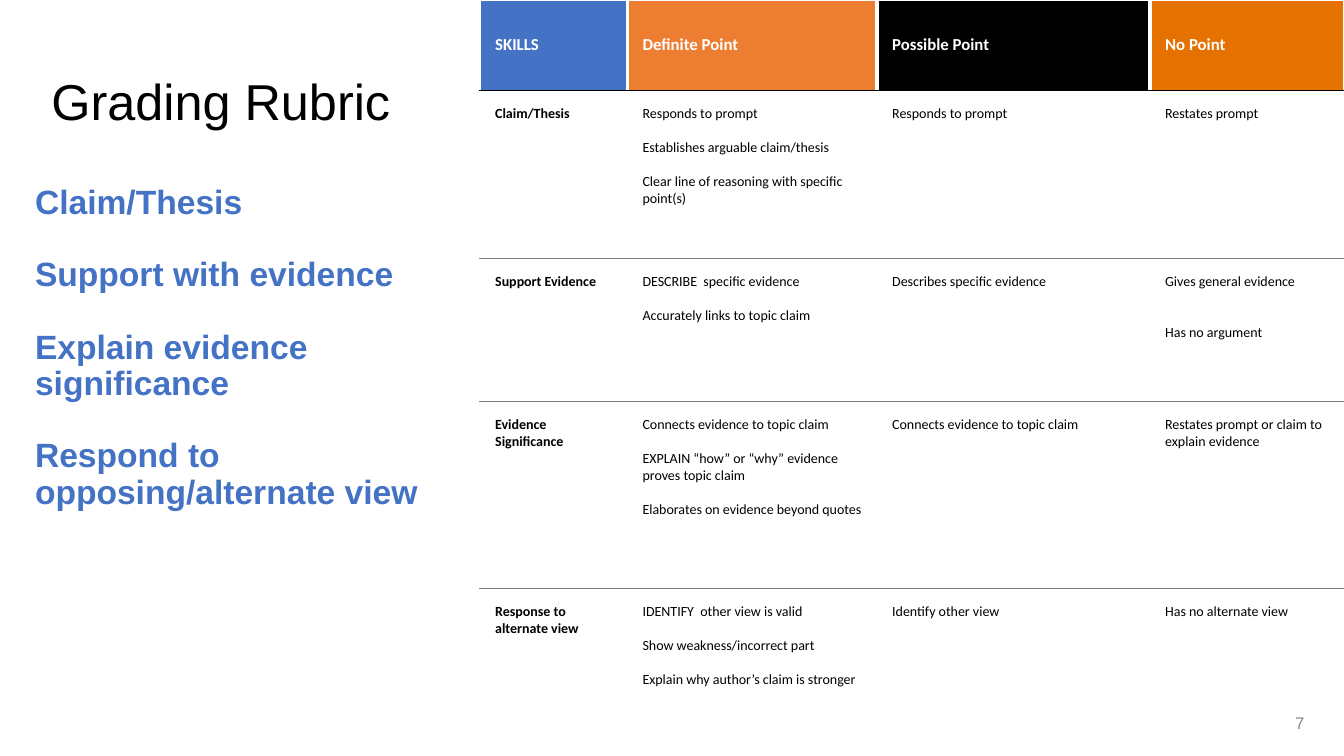
from lxml.etree import SubElement
from pptx import Presentation
from pptx.dml.color import RGBColor
from pptx.enum.text import MSO_ANCHOR as Anchor, MSO_AUTO_SIZE as AutoSize, PP_ALIGN as Align
from pptx.oxml.ns import qn
from pptx.util import Pt

WHITE = RGBColor(0xFF, 0xFF, 0xFF)
BLACK = RGBColor(0, 0, 0)
BLUE = RGBColor(0x44, 0x72, 0xC4)
ORANGE = RGBColor(0xED, 0x7D, 0x31)
DARK_ORANGE = RGBColor(0xE5, 0x72, 0x00)
RULE_GRAY = RGBColor(0x7F, 0x7F, 0x7F)
NUMBER_GRAY = RGBColor(0x89, 0x89, 0x89)

TITLE = "Grading Rubric"
SKILLS = [
    "Claim/Thesis",
    "Support with evidence",
    "Explain evidence significance",
    "Respond to opposing/alternate view",
]
PAGE_NUMBER = "7"
HEADERS = [["SKILLS"], ["Definite Point"], ["Possible Point"], ["No Point"]]
HEADER_FILLS = [BLUE, ORANGE, BLACK, DARK_ORANGE]
CRITERIA = [
    [
        ["Claim/Thesis"],
        [
            "Responds to prompt",
            "Establishes arguable claim/thesis",
            "Clear line of reasoning with specific point(s)",
        ],
        ["Responds to prompt"],
        ["Restates prompt"],
    ],
    [
        ["Support Evidence"],
        ["DESCRIBE  specific evidence", "Accurately links to topic claim"],
        ["Describes specific evidence"],
        ["Gives general evidence", "Has no argument"],
    ],
    [
        ["Evidence Significance"],
        [
            "Connects evidence to topic claim",
            "EXPLAIN “how” or “why” evidence proves topic claim",
            "Elaborates on evidence beyond quotes",
        ],
        ["Connects evidence to topic claim"],
        ["Restates prompt or claim to explain evidence"],
    ],
    [
        ["Response to alternate view"],
        [
            "IDENTIFY  other view is valid",
            "Show weakness/incorrect part",
            "Explain why author’s claim is stronger",
        ],
        ["Identify other view"],
        ["Has no alternate view"],
    ],
]
COLUMN_WIDTHS = [105.3, 178.3, 195, 138.5]
ROW_HEIGHTS = [64.6, 120, 102.2, 133.6, 119.6]
TABLE_LEFT = 342.9
CELL_MARGIN = 10.8
LINE_GAP = 12.1
DOUBLE_GAP_CELL = (2, 3)

TITLE_FONT = {"name": "Arial", "size": Pt(36), "bold": False, "color": BLACK}
SKILL_FONT = {"name": "Arial", "size": Pt(24), "bold": True, "color": BLUE}
NUMBER_FONT = {"name": "Arial", "size": Pt(12), "bold": False, "color": NUMBER_GRAY}
HEADER_FONT = {"name": "Calibri", "size": Pt(12), "bold": True, "color": WHITE}
LABEL_FONT = {"name": "Calibri", "size": Pt(10), "bold": True, "color": BLACK}
CELL_FONT = LABEL_FONT | {"bold": False}


def write(frame, texts, font, gap=0, spacing=1.0, align=Align.LEFT):
    for index, text in enumerate(texts):
        paragraph = frame.paragraphs[0] if index == 0 else frame.add_paragraph()
        properties = paragraph._p.get_or_add_pPr()
        properties.set("marL", "0")
        properties.set("indent", "0")
        SubElement(properties, qn("a:buNone"))
        paragraph.alignment = align
        paragraph.line_spacing = spacing
        paragraph.space_before = Pt(gap if index else 0)
        run = paragraph.add_run()
        run.text = text
        for key, value in font.items():
            if key == "color":
                run.font.color.rgb = value
            else:
                setattr(run.font, key, value)


def place(shape, box, top_margin, anchor):
    for key, value in zip(("left", "top", "width", "height"), box):
        setattr(shape, key, Pt(value))
    frame_format = {
        "margin_left": 0,
        "margin_top": Pt(top_margin),
        "margin_right": 0,
        "margin_bottom": 0,
        "vertical_anchor": anchor,
        "word_wrap": True,
        "auto_size": AutoSize.NONE,
    }
    for key, value in frame_format.items():
        setattr(shape.text_frame, key, value)
    return shape.text_frame


def add_border(cell, side, color, width):
    line = SubElement(cell._tc.get_or_add_tcPr(), qn(f"a:ln{side}"), w=str(Pt(width)))
    fill = SubElement(line, qn("a:solidFill"))
    SubElement(fill, qn("a:srgbClr"), val=str(color))


def format_cell(cell, row, column):
    last_row, last_column = len(ROW_HEIGHTS) - 1, len(COLUMN_WIDTHS) - 1
    if column > 0:
        add_border(cell, "L", WHITE, 3)
    if column < last_column:
        add_border(cell, "R", WHITE, 3)
    if row > 0:
        add_border(cell, "T", BLACK if row == 1 else RULE_GRAY, 0.75)
    if row < last_row:
        add_border(cell, "B", BLACK if row == 0 else RULE_GRAY, 0.75)
    for side in ("left", "top", "right", "bottom"):
        setattr(cell, f"margin_{side}", Pt(CELL_MARGIN))
    if row == 0:
        cell.fill.solid()
        cell.fill.fore_color.rgb = HEADER_FILLS[column]
        cell.vertical_anchor = Anchor.MIDDLE
    else:
        cell.fill.background()
        cell.vertical_anchor = Anchor.TOP


def add_rubric(slide):
    rows = [HEADERS] + CRITERIA
    table = slide.shapes.add_table(
        len(rows), len(HEADERS), Pt(TABLE_LEFT), 0,
        Pt(sum(COLUMN_WIDTHS)), Pt(sum(ROW_HEIGHTS)),
    ).table
    table.horz_banding = False
    for column, width in zip(table.columns, COLUMN_WIDTHS):
        column.width = Pt(width)
    for row, height in zip(table.rows, ROW_HEIGHTS):
        row.height = Pt(height)
    for row, cells in enumerate(rows):
        for column, texts in enumerate(cells):
            cell = table.cell(row, column)
            format_cell(cell, row, column)
            font = HEADER_FONT if row == 0 else LABEL_FONT if column == 0 else CELL_FONT
            gap = LINE_GAP * (2 if (row, column) == DOUBLE_GAP_CELL else 1)
            write(cell.text_frame, texts, font, gap)


def main():
    presentation = Presentation()
    presentation.slide_width, presentation.slide_height = Pt(960), Pt(540)
    slide = presentation.slides.add_slide(presentation.slide_layouts[1])
    title, body = slide.placeholders
    title_frame = place(title, (36.7, 43.9, 294.5, 90), 10.8, Anchor.TOP)
    write(title_frame, [TITLE], TITLE_FONT, spacing=0.9)
    add_rubric(slide)
    body_frame = place(body, (25, 114.5, 294.5, 293), 18, Anchor.TOP)
    write(body_frame, SKILLS, SKILL_FONT, gap=25.8, spacing=0.9)
    number = slide.shapes.add_textbox(0, 0, 0, 0)
    number_frame = place(number, (707.8, 494.6, 223.9, 28.8), 0, Anchor.BOTTOM)
    write(number_frame, [PAGE_NUMBER], NUMBER_FONT, align=Align.RIGHT)
    presentation.save("out.pptx")


if __name__ == "__main__":
    main()
